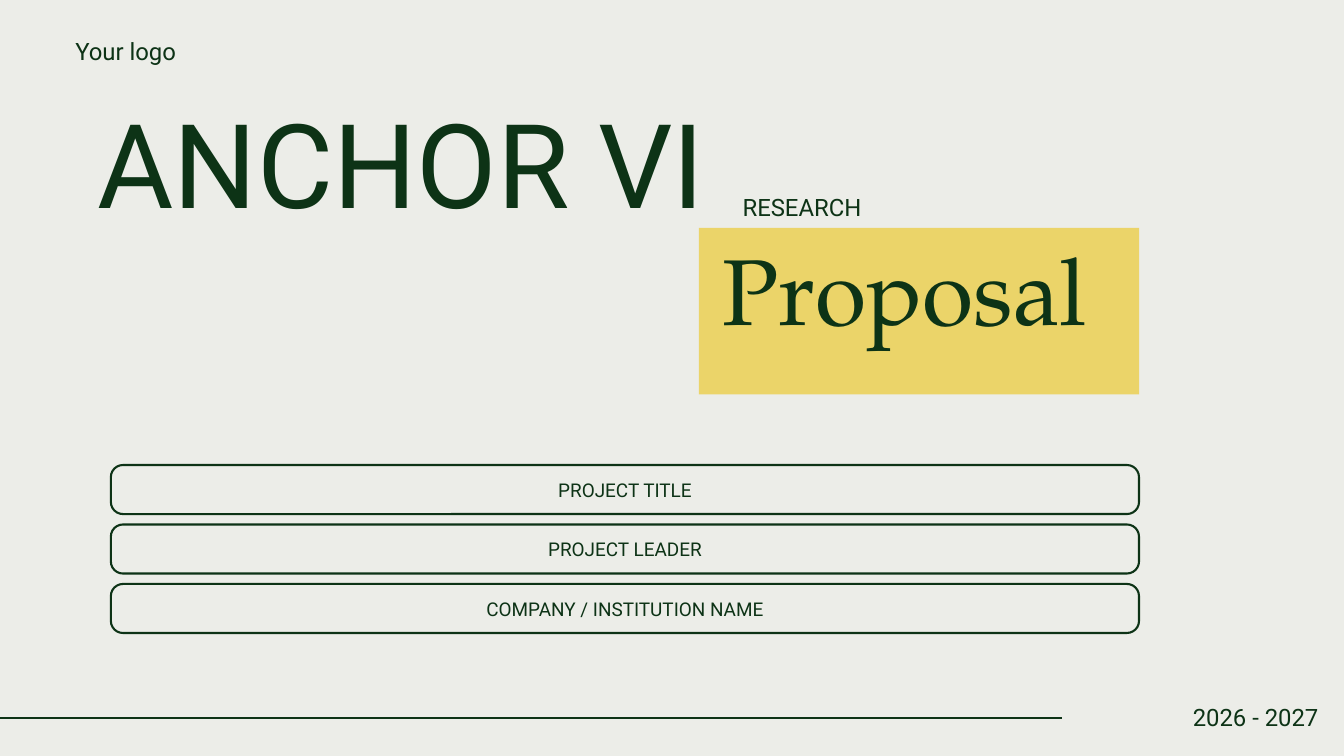
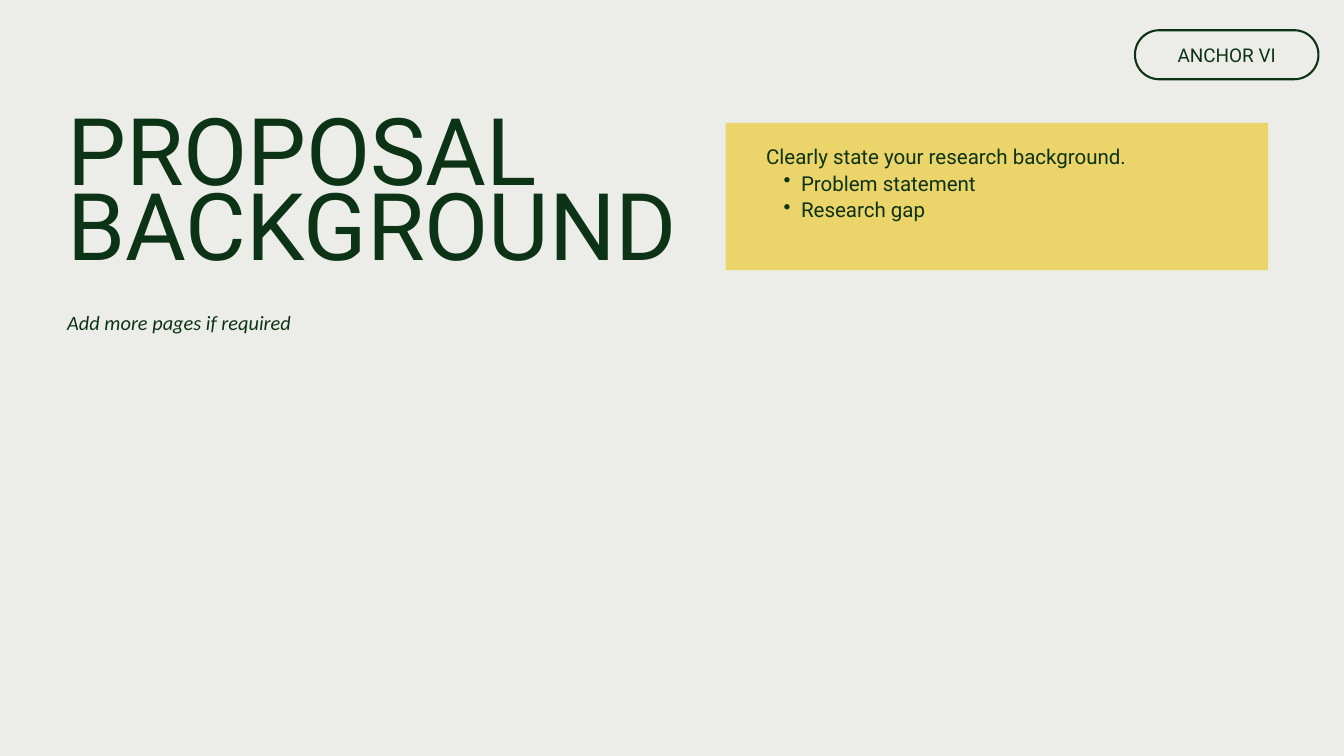
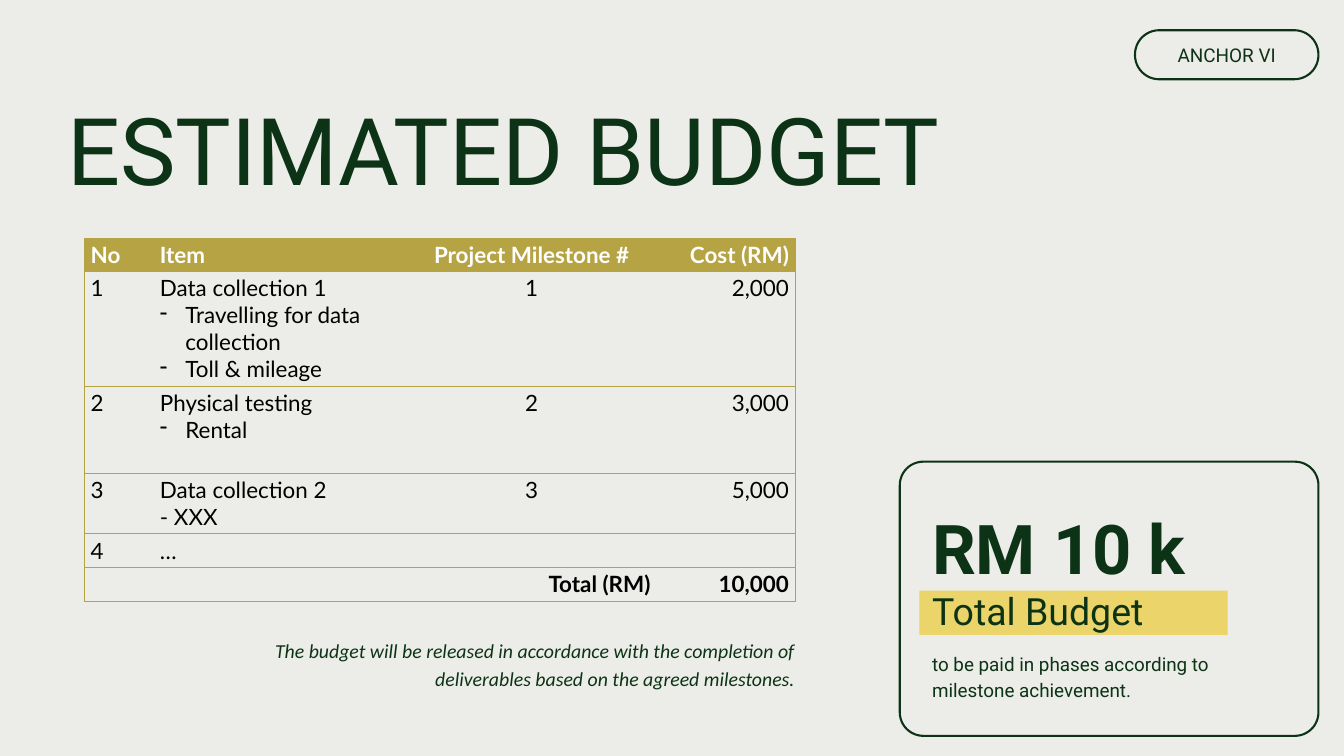
"""Build the three slides of a research proposal template."""
from lxml import etree
from pptx import Presentation
from pptx.dml.color import RGBColor
from pptx.enum.shapes import MSO_CONNECTOR, MSO_SHAPE
from pptx.enum.text import MSO_ANCHOR, PP_ALIGN
from pptx.oxml.ns import qn
from pptx.util import Inches, Pt

LEFT, CENTER, RIGHT = PP_ALIGN.LEFT, PP_ALIGN.CENTER, PP_ALIGN.RIGHT
MIDDLE = MSO_ANCHOR.MIDDLE
RECTANGLE, ROUNDED = MSO_SHAPE.RECTANGLE, MSO_SHAPE.ROUNDED_RECTANGLE
STRAIGHT = MSO_CONNECTOR.STRAIGHT

COLORS = {
    "background": "ECEDE8",
    "green": "0D3316",
    "yellow": "EBD469",
    "gold": "B6A343",
    "white": "FFFFFF",
    "black": "000000",
}
LINE_WIDTH = 2.25
NO_TABLE_STYLE = "{2D5ABB26-0587-4C30-8999-92F81FD0307C}"
TITLE = {"size": 100, "spacing": 80}
LABEL = {"size": 25.6, "spacing": 30.7}
BUTTON = {"size": 20.3, "spacing": 24.4, "align": CENTER}


def add_box(slide, left, top, width, height, kind=None, fill=None, radius=None):
    """Add a text box, or a filled or outlined shape, without insets."""
    place = [Inches(value) for value in (left, top, width, height)]
    if kind is None:
        shape = slide.shapes.add_textbox(*place)
    else:
        shape = slide.shapes.add_shape(kind, *place)
        shape.shadow.inherit = False
        if fill:
            shape.fill.solid()
            shape.fill.fore_color.rgb = RGBColor.from_string(COLORS[fill])
            shape.line.fill.background()
        else:
            shape.fill.background()
            shape.line.color.rgb = RGBColor.from_string(COLORS["green"])
            shape.line.width = Pt(LINE_WIDTH)
        if radius is not None:
            shape.adjustments[0] = radius / min(width, height)
        shape.text_frame.vertical_anchor = MIDDLE
    frame = shape.text_frame
    frame.word_wrap = True
    frame.margin_left = frame.margin_right = frame.margin_top = frame.margin_bottom = 0
    return shape


def write(frame, text, size, spacing=None, align=LEFT, font="Roboto", color="green",
          bold=False, italic=False, bullet="•", indent=0.52, hanging=0.26):
    """Write and format lines of text; a leading tab marks a bulleted line."""
    frame.text = text
    for line, paragraph in zip(text.split("\n"), frame.paragraphs):
        paragraph.text = line.lstrip("\t")
        paragraph.alignment = align
        if spacing:
            paragraph.line_spacing = Pt(spacing)
        if line.startswith("\t"):
            properties = paragraph._p.get_or_add_pPr()
            properties.set("marL", str(Inches(indent)))
            properties.set("indent", str(-Inches(hanging)))
            etree.SubElement(properties, qn("a:buChar"), char=bullet)
        for run in paragraph.runs:
            run.font.size = Pt(size)
            run.font.name = font
            run.font.bold = bold
            run.font.italic = italic
            run.font.color.rgb = RGBColor.from_string(COLORS[color])


presentation = Presentation()
presentation.slide_width = Inches(20)
presentation.slide_height = Inches(11.25)
slides = []
for number in range(3):
    slide = presentation.slides.add_slide(presentation.slide_layouts[6])
    slide.background.fill.solid()
    slide.background.fill.fore_color.rgb = RGBColor.from_string(COLORS["background"])
    if number > 0:
        badge = add_box(slide, 16.89, 0.45, 2.73, 0.73, ROUNDED, radius=0.36)
        write(badge.text_frame, "ANCHOR VI", **BUTTON)
    slides.append(slide)
cover, background_slide, budget_slide = slides

add_box(cover, 10.4, 3.39, 6.55, 2.48, RECTANGLE, "yellow")
write(add_box(cover, 8.73, 4.22, 9.47, 1.08).text_frame, "Proposal", 100, 65,
      CENTER, "TeX Gyre Pagella")
write(add_box(cover, 1.12, 2.06, 9.7, 1.58).text_frame, "ANCHOR VI", 125.4, 100.3, CENTER)
write(add_box(cover, 11.05, 2.86, 3.81, 0.43).text_frame, "RESEARCH", **LABEL)
write(add_box(cover, 1.12, 0.55, 3.81, 0.43).text_frame, "Your logo", **LABEL)
years = add_box(cover, 15.81, 10.46, 3.81, 0.44)
write(years.text_frame, "2026 - 2027", align=RIGHT, **LABEL)

footer_line = cover.shapes.add_connector(
    STRAIGHT, 0, Inches(10.68), Inches(15.81), Inches(10.68))
footer_line.end_connect(years, 1)
footer_line.line.color.rgb = RGBColor.from_string(COLORS["green"])
footer_line.line.width = Pt(LINE_WIDTH)
etree.SubElement(footer_line._element.spPr, qn("a:effectLst"))

fields = ["PROJECT TITLE", "PROJECT LEADER", "COMPANY / INSTITUTION NAME"]
for index, field in enumerate(fields):
    button = add_box(cover, 1.65, 6.92 + 0.885 * index, 15.3, 0.73, ROUNDED, radius=0.18)
    write(button.text_frame, field, **BUTTON)

add_box(background_slide, 10.8, 1.83, 8.07, 2.19, RECTANGLE, "yellow")
write(add_box(background_slide, 1, 1.93, 9.81, 2.37).text_frame,
      "PROPOSAL BACKGROUND", **TITLE)
write(add_box(background_slide, 11.4, 2.11, 7.19, 1.74).text_frame,
      "Clearly state your research background.\n\tProblem statement\n\tResearch gap", 22, 28.6)
write(add_box(background_slide, 1, 4.58, 17.72, 0.94).text_frame,
      "Add more pages if required", 21.8, 28.3, font="Calibri", italic=True)

write(add_box(budget_slide, 1, 1.93, 15.75, 1.26).text_frame, "ESTIMATED BUDGET", **TITLE)
add_box(budget_slide, 13.39, 6.87, 6.23, 4.08, ROUNDED, radius=0.35)
add_box(budget_slide, 13.68, 8.79, 4.59, 0.66, RECTANGLE, "yellow")
write(add_box(budget_slide, 13.87, 7.43, 4.58, 1.25).text_frame, "RM 10 k", 73.5, 95.6, bold=True)
write(add_box(budget_slide, 13.87, 8.7, 4.58, 0.71).text_frame, "Total Budget", 40.2, 52.2)
write(add_box(budget_slide, 13.87, 9.65, 5.28, 0.77).text_frame,
      "to be paid in phases according to milestone achievement.", 20.2, 28.3)
write(add_box(budget_slide, 3.25, 9.45, 8.58, 0.8).text_frame,
      "The budget will be released in accordance with the completion of "
      "deliverables based on the agreed milestones.",
      21.2, 29.7, RIGHT, "Calibri", italic=True)

budget_rows = [
    ["No", "Item", "Project Milestone #", "Cost (RM)"],
    ["1", "Data collection 1\n\tTravelling for data collection\n\tToll & mileage", "1", "2,000"],
    ["2", "Physical testing\n\tRental", "2", "3,000"],
    ["3", "Data collection 2\n- XXX", "3", "5,000"],
    ["4", "…", "", ""],
    ["Total (RM)", "", "", "10,000"],
]
column_widths = [1.03, 3.76, 3.74, 2.06]
row_heights = [0.5, 1.7, 1.3, 0.9, 0.5, 0.5]
column_alignments = [LEFT, LEFT, CENTER, RIGHT]
last_row, last_column = len(budget_rows) - 1, len(column_widths) - 1

table = budget_slide.shapes.add_table(
    len(budget_rows), len(column_widths), Inches(1.25), Inches(3.54),
    Inches(sum(column_widths)), Inches(sum(row_heights))).table
table._tbl.tblPr.find(qn("a:tableStyleId")).text = NO_TABLE_STYLE
for column, width in zip(table.columns, column_widths):
    column.width = Inches(width)
for row, height in zip(table.rows, row_heights):
    row.height = Inches(height)
table.cell(last_row, 0).merge(table.cell(last_row, 2))

for row_index, values in enumerate(budget_rows):
    is_header, is_total = row_index == 0, row_index == last_row
    for column_index, value in enumerate(values):
        cell = table.cell(row_index, column_index)
        if value:
            write(cell.text_frame, value, 24, font="Lato",
                  align=RIGHT if is_total else column_alignments[column_index],
                  color="white" if is_header else "black", bold=is_header or is_total,
                  bullet="-", indent=0.38, hanging=0.38)
        edges = ["a:lnT", "a:lnB"]
        if column_index == last_column:
            edges.insert(0, "a:lnR")
        if column_index == 0:
            edges.insert(0, "a:lnL")
        cell_properties = cell._tc.get_or_add_tcPr()
        for edge in edges:
            border = etree.SubElement(cell_properties, qn(edge), w=str(Pt(0.5)))
            border_fill = etree.SubElement(border, qn("a:solidFill"))
            etree.SubElement(border_fill, qn("a:srgbClr"), val=COLORS["gold"])
        if is_header:
            cell.fill.solid()
            cell.fill.fore_color.rgb = RGBColor.from_string(COLORS["gold"])
        else:
            cell.fill.background()

presentation.save("out.pptx")
